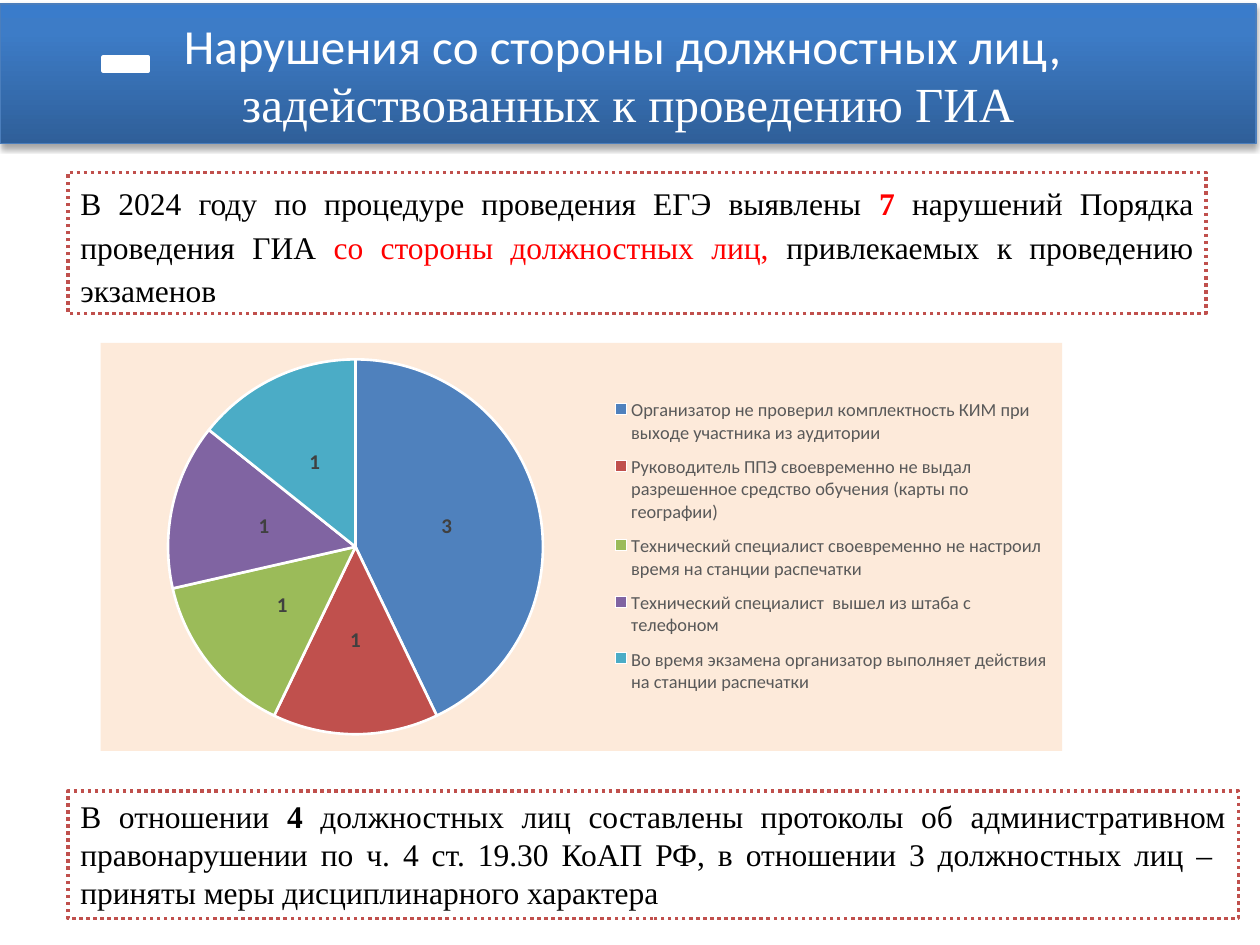
from copy import deepcopy

from pptx import Presentation
from pptx.chart.data import CategoryChartData
from pptx.dml.color import RGBColor
from pptx.enum.chart import XL_CHART_TYPE, XL_LABEL_POSITION, XL_LEGEND_POSITION
from pptx.enum.dml import MSO_LINE
from pptx.enum.shapes import MSO_SHAPE
from pptx.enum.text import MSO_ANCHOR, PP_ALIGN
from pptx.oxml import parse_xml
from pptx.oxml.ns import nsdecls, qn
from pptx.util import Cm, Pt

HUES = {
    "white": "FFFFFF", "black": "000000", "red": "FF0000", "brick": "C0504D",
    "edge": "4B7EBC", "peach": "FDEADA", "grey": "595959", "dark": "404040",
}
SHADES = [(0, "2F5F99"), (0.8, "3D7CC7"), (1, "3A7CCB")]
SLICES = ["4F81BD", "C0504D", "9BBB59", "8064A2", "4BACC6"]
SERIF, SANS = "Times New Roman", "Calibri"
FAULTS = [
    ("Организатор не проверил комплектность КИМ при выходе участника из аудитории", 3),
    ("Руководитель ППЭ своевременно не выдал разрешенное средство обучения (карты по географии)", 1),
    ("Технический специалист своевременно не настроил время на станции распечатки", 1),
    ("Технический специалист  вышел из штаба с телефоном", 1),
    ("Во время экзамена организатор выполняет действия на станции распечатки", 1),
]
FOUND = [
    ("В 2024 году по процедуре проведения ЕГЭ выявлены ", "black", False),
    ("7 ", "red", True),
    ("нарушений Порядка проведения ГИА ", "black", False),
    ("со стороны должностных лиц, ", "red", False),
    ("привлекаемых к проведению экзаменов", "black", False),
]
DONE = [
    ("В отношении ", "black", False),
    ("4", "black", True),
    (" должностных лиц составлены протоколы об административном правонарушении "
     "по ч. 4 ст. 19.30 КоАП РФ, в отношении 3 должностных лиц –  "
     "приняты меры дисциплинарного характера", "black", False),
]


def paint(font, size, hue, face, bold=False):
    """Set size, colour, face and weight of a font."""
    font.size, font.name, font.bold = Pt(size), face, bold
    font.color.rgb = RGBColor.from_string(HUES[hue])


def write(para, text, *style):
    """Add one styled run to a paragraph."""
    run = para.add_run()
    run.text = text
    paint(run.font, *style)


def block(slide, box, edge, width):
    """Add a white rectangle with a coloured outline."""
    shape = slide.shapes.add_shape(MSO_SHAPE.RECTANGLE, *map(Cm, box))
    shape.shadow.inherit = False
    shape.fill.solid()
    shape.fill.fore_color.rgb = RGBColor.from_string(HUES["white"])
    shape.line.color.rgb = RGBColor.from_string(HUES[edge])
    shape.line.width = Pt(width)
    return shape


def shade(shape):
    """Give a shape the vertical blue gradient and a soft shadow."""
    shape.fill.gradient()
    shape.fill.gradient_angle = 90
    props = shape._element.spPr
    first = props.find(".//" + qn("a:gs"))
    first.addnext(deepcopy(first))
    for stop, (place, hue) in zip(shape.fill.gradient_stops, SHADES):
        stop.position = place
        stop.color.rgb = RGBColor.from_string(hue)
    props.find(qn("a:effectLst")).append(parse_xml(
        f'<a:outerShdw {nsdecls("a")} blurRad="40000" dist="23000" dir="5400000" rotWithShape="0">'
        f'<a:srgbClr val="{HUES["black"]}"><a:alpha val="35000"/></a:srgbClr></a:outerShdw>'))


def banner(slide, box):
    """Draw the title band with its two lines and the white dash."""
    left, top, _, high = box
    band = block(slide, box, "edge", 0.75)
    shade(band)
    frame = band.text_frame
    frame.word_wrap = False
    frame.vertical_anchor = MSO_ANCHOR.MIDDLE
    lines = [("Нарушения со стороны должностных лиц, ", SANS),
             ("задействованных к проведению ГИА", SERIF)]
    for row, (text, face) in enumerate(lines):
        para = frame.add_paragraph() if row else frame.paragraphs[0]
        para.alignment = PP_ALIGN.CENTER
        write(para, text, 28, "white", face)
    block(slide, (left + 2.08, top + high * 0.38, 0.91, 0.28), "white", 2)


def note(slide, box, runs, space=None, before=0):
    """Draw a dotted box with one justified paragraph."""
    shape = block(slide, box, "brick", 2)
    shape.line.dash_style = MSO_LINE.ROUND_DOT
    frame = shape.text_frame
    frame.word_wrap = True
    frame.vertical_anchor = MSO_ANCHOR.TOP
    para = frame.paragraphs[0]
    para.alignment = PP_ALIGN.JUSTIFY
    para.line_spacing = space
    para.space_before = Pt(before)
    for text, hue, bold in runs:
        write(para, text, 18, hue, SERIF, bold)


def layout(part, after, area, inner=""):
    """Place a chart part by fractions of the chart area."""
    for old in part.findall(qn("c:layout")):
        part.remove(old)
    sides = "".join(f'<c:{key} val="{val}"/>' for key, val in zip("xywh", area))
    node = parse_xml(f'<c:layout {nsdecls("c")}><c:manualLayout>{inner}<c:xMode val="edge"/>'
                     f'<c:yMode val="edge"/>{sides}</c:manualLayout></c:layout>')
    if after is None:
        part.insert(0, node)
    else:
        after.addnext(node)


def pie(slide, box):
    """Draw the pie of faults with its legend."""
    data = CategoryChartData()
    data.categories = [name for name, _ in FAULTS]
    data.add_series("Series 1", [count for _, count in FAULTS])
    chart = slide.shapes.add_chart(XL_CHART_TYPE.PIE, *map(Cm, box), data).chart
    chart.has_title = False
    paint(chart.font, 10, "black", SANS)
    root = chart._chartSpace
    root.find(qn("c:chart")).addnext(parse_xml(
        f'<c:spPr {nsdecls("c", "a")}><a:solidFill><a:srgbClr val="{HUES["peach"]}"/>'
        '</a:solidFill><a:ln><a:noFill/></a:ln></c:spPr>'))

    plot = chart.plots[0]
    plot.vary_by_categories = True
    for spot, hue in enumerate(SLICES):
        form = plot.series[0].points[spot].format
        form.fill.solid()
        form.fill.fore_color.rgb = RGBColor.from_string(hue)
        form.line.color.rgb = RGBColor.from_string(HUES["white"])
        form.line.width = Pt(1.5)
    plot.has_data_labels = True
    labels = plot.data_labels
    labels.show_value = True
    labels.show_percentage = False
    labels.position = XL_LABEL_POSITION.CENTER
    paint(labels.font, 12, "dark", SANS, True)

    chart.has_legend = True
    legend = chart.legend
    legend.position = XL_LEGEND_POSITION.RIGHT
    legend.include_in_layout = False
    paint(legend.font, 10.5, "grey", SANS)
    layout(root.find(".//" + qn("c:plotArea")), None, (0.07, 0.04, 0.39, 0.92),
           '<c:layoutTarget val="inner"/>')
    key = root.find(".//" + qn("c:legend"))
    layout(key, key.find(qn("c:legendPos")), (0.53, 0.11, 0.46, 0.78))


def main():
    """Build and save the slide."""
    deck = Presentation()
    deck.slide_width, deck.slide_height = Cm(25.4), Cm(19.05)
    slide = deck.slides.add_slide(deck.slide_layouts[6])
    banner(slide, (0, 0.08, 25.32, 2.82))
    note(slide, (1.37, 3.48, 22.94, 2.84), FOUND, 1.15, 6)
    pie(slide, (2.03, 6.91, 19.38, 8.23))
    note(slide, (1.37, 15.95, 23.6, 2.57), DONE)
    deck.save("out.pptx")


if __name__ == "__main__":
    main()
